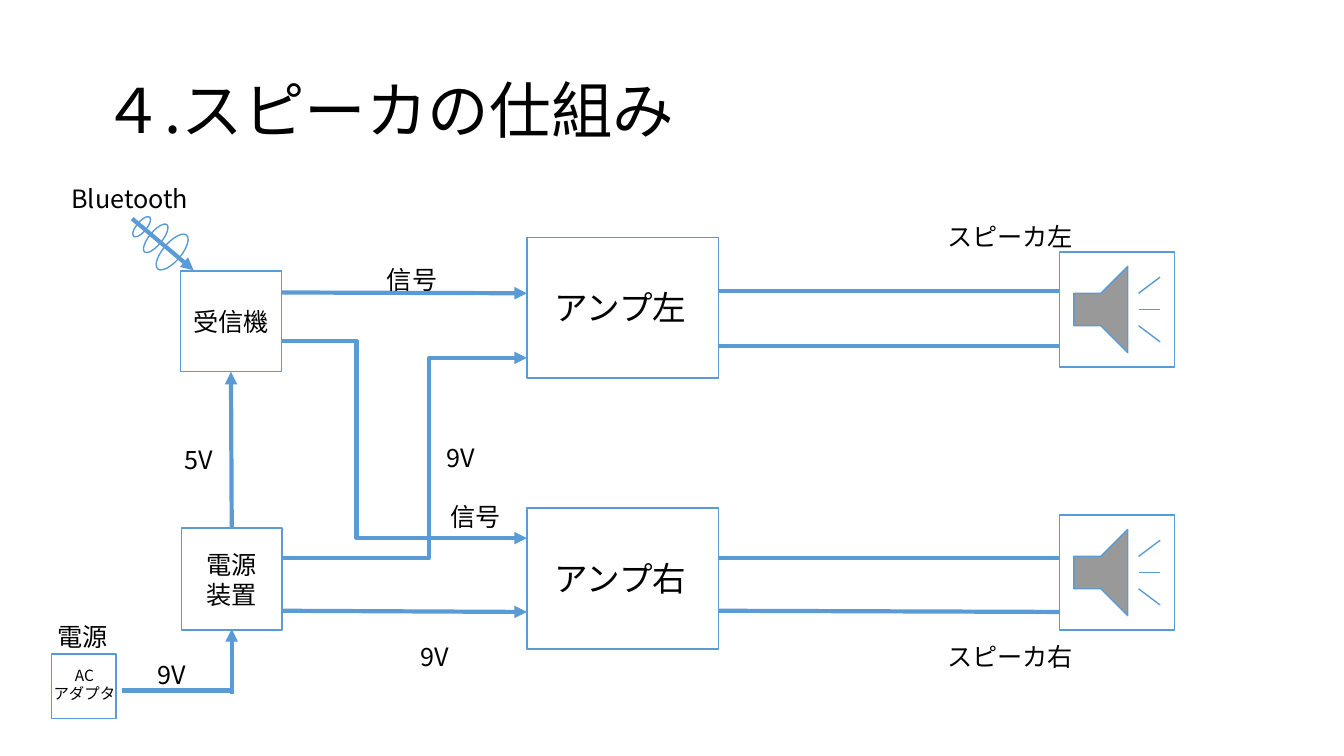
from pptx import Presentation
from pptx.dml.color import RGBColor
from pptx.enum.shapes import MSO_CONNECTOR, MSO_SHAPE
from pptx.enum.text import MSO_ANCHOR, MSO_AUTO_SIZE, PP_ALIGN
from pptx.oxml.ns import qn
from pptx.util import Cm, Pt
from lxml import etree

BLUE = RGBColor(0x5B, 0x9B, 0xD5)
BLACK = RGBColor(0, 0, 0)
WHITE = RGBColor(255, 255, 255)
FONT = "Noto Sans CJK JP"

RECTANGLE = MSO_SHAPE.RECTANGLE
OVAL = MSO_SHAPE.OVAL
SPEAKER = MSO_SHAPE.ACTION_BUTTON_SOUND
STRAIGHT, ELBOW = MSO_CONNECTOR.STRAIGHT, MSO_CONNECTOR.ELBOW
MIDDLE = MSO_ANCHOR.MIDDLE
LEFT, CENTER = PP_ALIGN.LEFT, PP_ALIGN.CENTER
GROW = MSO_AUTO_SIZE.SHAPE_TO_FIT_TEXT

# Left and right ends of the two wiring zones, in cm
UNIT_RIGHT, AMP_LEFT, AMP_RIGHT, SPEAKER_LEFT = 7.09, 13.28, 18.11, 26.7

AMPS = [(5.99, 3.54, None), (12.8, 3.56, WHITE)]
SPEAKER_TOPS = [6.35, 12.98]
SPEAKER_WIRES = [(7.34, 7.34), (8.71, 8.71), (14.07, 14.07), (15.39, 15.42)]
WAVES = [
    (3.78, 6.12, 1.12, 0.46, 310.6),
    (3.48, 5.84, 0.89, 0.33, 309.3),
    (3.25, 5.59, 0.64, 0.25, 309.7),
]
# text, left, top, width, height, size, wraps
LABELS = [
    ("アンプ左", 13.72, 7.11, 3.99, 1.27, 24, True),
    ("アンプ右", 13.72, 13.94, 4.45, 1.27, 24, True),
    ("スピーカ左", 23.62, 5.46, 4.32, 1.02, 18, True),
    ("スピーカ右", 23.62, 16.03, 5.16, 1.02, 18, True),
    ("9V", 10.36, 16.03, 1.3, 1.02, 18, False),
    ("9V", 11, 11.02, 1.3, 1.02, 18, False),
    ("9V", 3.73, 16.48, 1.3, 1.02, 18, False),
    ("5V", 4.39, 11.07, 1.45, 1.02, 18, True),
    ("信号", 11.1, 12.5, 1.93, 1.02, 18, True),
    ("信号", 9.5, 6.53, 1.93, 1.02, 18, True),
    ("Bluetooth", 1.55, 4.5, 3.56, 1.02, 18, True),
    ("電源", 1.19, 15.52, 1.88, 1.02, 18, True),
]


def write(frame, text, size, align=LEFT):
    """Fill a text frame, one paragraph per line of text."""
    frame.text = text
    for para in frame.paragraphs:
        para.alignment = align
        para.font.size = Pt(size)
        para.font.color.rgb = BLACK
        para.font.name = FONT
        properties = para._p.pPr.find(qn("a:defRPr"))
        etree.SubElement(properties, qn("a:ea"), typeface=FONT)


def add_outline(page, kind, left, top, width, height, fill=None, text=""):
    shape = page.shapes.add_shape(kind, Cm(left), Cm(top), Cm(width), Cm(height))
    shape.shadow.inherit = False
    shape.line.color.rgb = BLUE
    shape.line.width = Pt(1)
    if fill is None:
        shape.fill.background()
    else:
        shape.fill.solid()
        shape.fill.fore_color.rgb = fill
    if text:
        shape.text_frame.vertical_anchor = MIDDLE
        write(shape.text_frame, text, 18, CENTER)
    return shape


def add_label(page, text, left, top, width, height, size, wraps, align=LEFT):
    box = page.shapes.add_textbox(Cm(left), Cm(top), Cm(width), Cm(height))
    box.text_frame.word_wrap = wraps
    box.text_frame.auto_size = GROW
    write(box.text_frame, text, size, align)


def add_title(page, text):
    box = page.shapes.add_textbox(Cm(2.34), Cm(1.02), Cm(29.21), Cm(3.68))
    box.text_frame.word_wrap = True
    box.text_frame.vertical_anchor = MIDDLE
    write(box.text_frame, text, 44)
    box.text_frame.paragraphs[0].line_spacing = 0.9


def add_wire(page, start, end, arrow=True, bend=None):
    """Join two points; bend is the share of the width where an elbow turns."""
    kind = STRAIGHT if bend is None else ELBOW
    points = [Cm(value) for value in (*start, *end)]
    wire = page.shapes.add_connector(kind, *points)
    wire.line.color.rgb = BLUE
    wire.line.width = Pt(3)
    properties = wire._element.spPr
    if arrow:
        etree.SubElement(properties.find(qn("a:ln")), qn("a:tailEnd"), type="triangle")
    if bend is not None:
        guides = properties.find(qn("a:prstGeom")).get_or_add_avLst()
        etree.SubElement(guides, qn("a:gd"), name="adj1", fmla=f"val {round(bend * 100000)}")
    etree.SubElement(properties, qn("a:effectLst"))


def add_wiring(page):
    add_wire(page, (UNIT_RIGHT, 7.37), (AMP_LEFT, 7.39))
    add_wire(page, (UNIT_RIGHT, 8.59), (AMP_LEFT, 13.56), bend=0.306)
    add_wire(page, (UNIT_RIGHT, 15.39), (AMP_LEFT, 15.42))
    add_wire(page, (UNIT_RIGHT, 14.07), (AMP_LEFT, 9.02), bend=0.601)
    for start, end in SPEAKER_WIRES:
        add_wire(page, (AMP_RIGHT, start), (SPEAKER_LEFT, end), arrow=False)
    add_wire(page, (5.84, 13.31), (5.82, 9.37))
    add_wire(page, (5.84, 17.48), (5.84, 15.85))
    add_wire(page, (3.07, 17.4), (5.82, 17.4), arrow=False)


def add_radio_signal(page):
    add_wire(page, (3.33, 5.51), (4.88, 6.81))
    for *place, angle in WAVES:
        add_outline(page, OVAL, *place).rotation = angle


def main():
    deck = Presentation()
    deck.slide_width, deck.slide_height = Cm(33.87), Cm(19.05)
    page = deck.slides.add_slide(deck.slide_layouts[6])

    add_outline(page, RECTANGLE, 4.57, 13.31, 2.54, 2.57, text="電源\n装置")
    add_outline(page, RECTANGLE, 4.55, 6.83, 2.54, 2.54, text="受信機")
    add_title(page, "４.スピーカの仕組み")
    for top, height, fill in AMPS:
        add_outline(page, RECTANGLE, AMP_LEFT, top, AMP_RIGHT - AMP_LEFT, height, fill)
    for top in SPEAKER_TOPS:
        add_outline(page, SPEAKER, SPEAKER_LEFT, top, 2.9, 2.9, WHITE)

    add_wiring(page)
    add_radio_signal(page)
    add_outline(page, RECTANGLE, 1.3, 16.48, 1.63, 1.63)
    for label in LABELS:
        add_label(page, *label)
    add_label(page, "AC\nアダプタ", 1.09, 16.66, 2.08, 1.19, 11, False, CENTER)

    deck.save("out.pptx")


if __name__ == "__main__":
    main()
